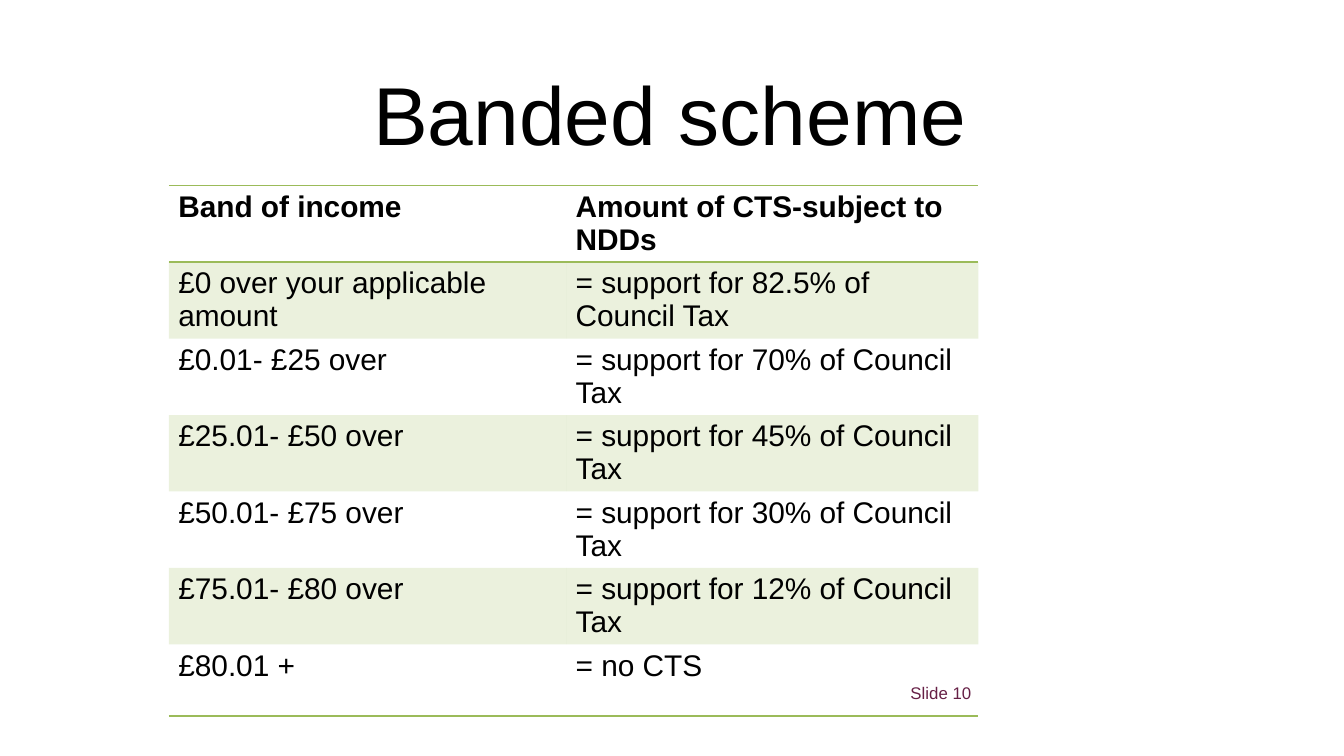
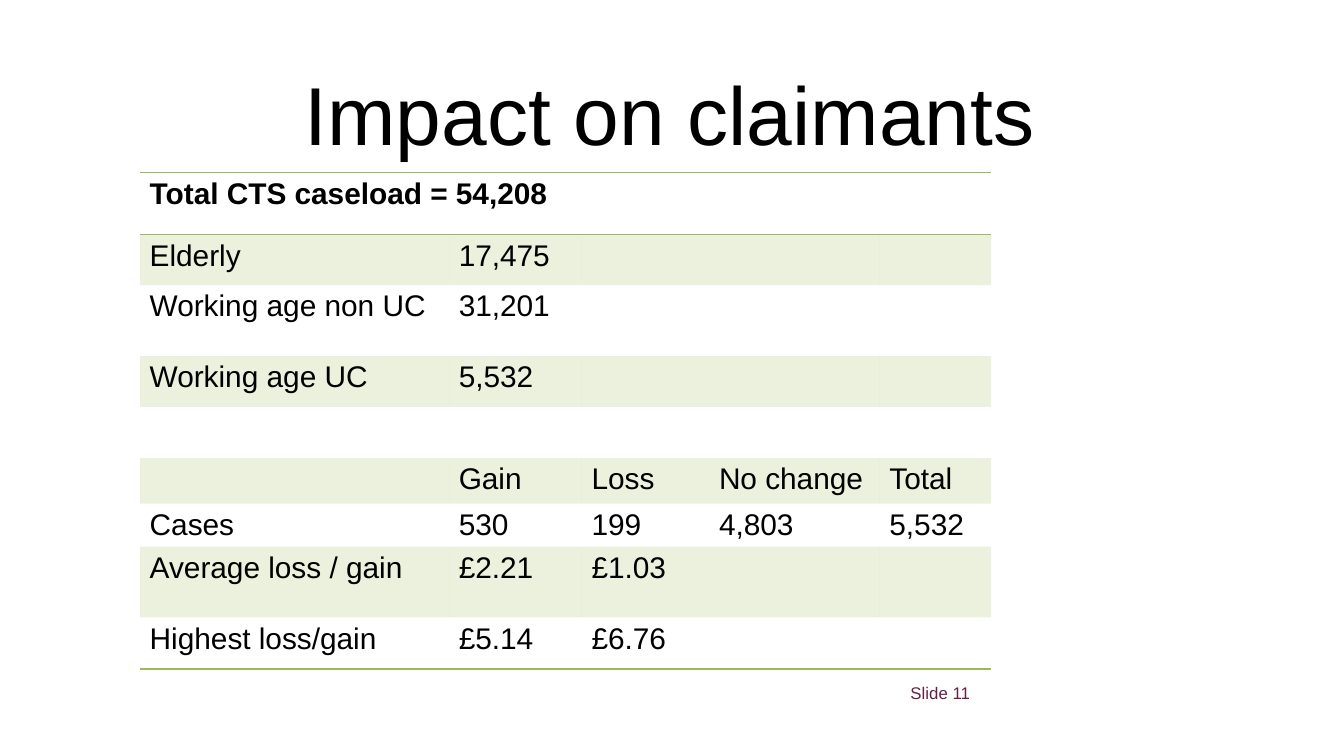
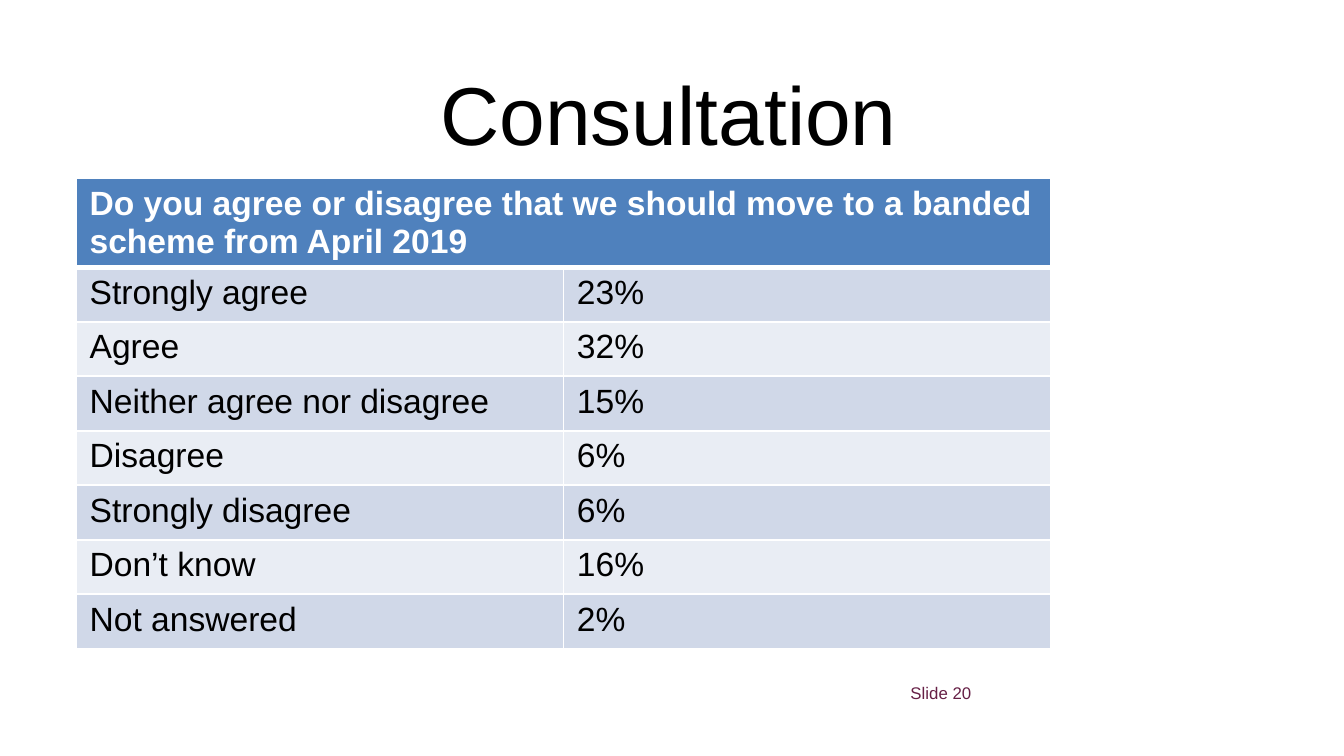
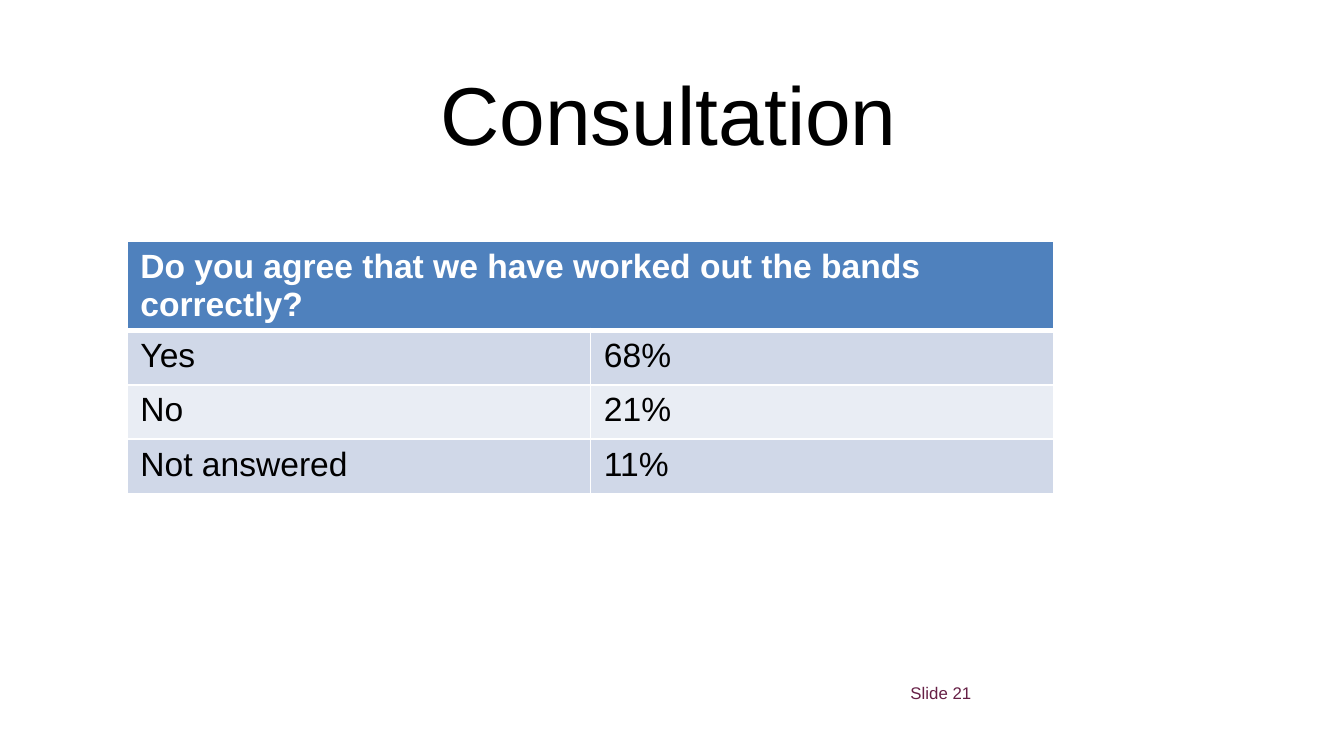
from dataclasses import dataclass

from lxml.etree import SubElement
from pptx import Presentation
from pptx.dml.color import RGBColor
from pptx.enum.text import PP_ALIGN
from pptx.oxml.ns import qn
from pptx.util import Cm, Pt


@dataclass(frozen=True)
class Theme:
    font: str = "Arial"
    black: str = "000000"
    white: str = "FFFFFF"
    plum: str = "662046"
    green: str = "9BBB59"
    blue: str = "4F81BD"
    blue_bands: tuple = ("D0D8E8", "E9EDF4")
    title_size: int = 44
    poll_size: int = 18
    figures_size: int = 16
    footer_size: int = 9
    green_opacity: int = 20
    thin_line: int = 1
    thick_line: int = 3


@dataclass(frozen=True)
class Box:
    """A region in centimetres."""
    left: float
    top: float
    width: float
    height: float

    def lengths(self):
        return [Cm(value) for value in (self.left, self.top, self.width, self.height)]


THEME = Theme()
PLAIN_TABLE_STYLE = "{2D5ABB26-0587-4C30-8999-92F81FD0307C}"
NARROW_TITLE = Box(4.98, 1.04, 15.37, 1.52)
WIDE_TITLE = Box(2.39, 1.04, 20.5, 1.52)
FOOTER = Box(16.87, 12.78, 5.92, 0.76)
POLL_ROW = 1.03

BANDS = [
    ("Band of income", "Amount of CTS-subject to NDDs"),
    ("£0 over your applicable amount", "= support for 82.5% of Council Tax"),
    ("£0.01- £25 over", "= support for 70% of Council Tax"),
    ("£25.01- £50 over", "= support for 45% of Council Tax"),
    ("£50.01- £75 over", "= support for 30% of Council Tax"),
    ("£75.01- £80 over", "= support for 12% of Council Tax"),
    ("£80.01 +", "= no CTS"),
]
IMPACT = [
    ("Total CTS caseload = 54,208",),
    ("Elderly", "17,475"),
    ("Working age non UC", "31,201"),
    ("Working age UC", "5,532"),
    (),
    ("", "Gain", "Loss", "No change", "Total"),
    ("Cases", "530", "199", "4,803", "5,532"),
    ("Average loss / gain", "£2.21", "£1.03"),
    ("Highest loss/gain", "£5.14", "£6.76"),
]
MOVE_POLL = [
    ("Do you agree or disagree that we should move to a banded scheme from April 2019",),
    ("Strongly agree", "23%"),
    ("Agree", "32%"),
    ("Neither agree nor disagree", "15%"),
    ("Disagree", "6%"),
    ("Strongly disagree", "6%"),
    ("Don’t know", "16%"),
    ("Not answered", "2%"),
]
BANDS_POLL = [
    ("Do you agree that we have worked out the bands correctly?",),
    ("Yes", "68%"),
    ("No", "21%"),
    ("Not answered", "11%"),
]


def write_text(text_frame, text, size, color=THEME.black, bold=False, align=PP_ALIGN.LEFT):
    text_frame.word_wrap = True
    paragraph = text_frame.paragraphs[0]
    paragraph.alignment = align
    run = paragraph.add_run()
    run.text = text
    run.font.name = THEME.font
    run.font.size = Pt(size)
    run.font.bold = bold
    run.font.color.rgb = RGBColor.from_string(color)


def fill_cell(cell, color, opacity=100):
    cell.fill.solid()
    cell.fill.fore_color.rgb = RGBColor.from_string(color)
    if opacity < 100:
        color_element = cell._tc.tcPr.find(qn("a:solidFill"))[0]
        SubElement(color_element, qn("a:alpha"), val=str(opacity * 1000))


def set_borders(cell, color, **widths):
    """Draw the sides named L, R, T and B, in points; call before filling the cell."""
    properties = cell._tc.get_or_add_tcPr()
    for side in "LRTB":
        if side in widths:
            line = SubElement(properties, qn(f"a:ln{side}"), w=str(Pt(widths[side])))
            fill = SubElement(line, qn("a:solidFill"))
            SubElement(fill, qn("a:srgbClr"), val=color)


def add_title(slide, box, text):
    text_frame = slide.shapes.add_textbox(*box.lengths()).text_frame
    text_frame.margin_top = Cm(0.15)
    text_frame.margin_bottom = 0
    write_text(text_frame, text, THEME.title_size, align=PP_ALIGN.CENTER)


def add_footer(slide, box, number):
    text_frame = slide.shapes.add_textbox(*box.lengths()).text_frame
    write_text(text_frame, f" Slide {number}", THEME.footer_size, THEME.plum)


def add_plain_table(slide, left, top, columns, heights):
    """Add an unstyled table whose column widths and row heights are in centimetres."""
    box = Box(left, top, sum(columns), sum(heights))
    table = slide.shapes.add_table(len(heights), len(columns), *box.lengths()).table
    table._tbl.tblPr.find(qn("a:tableStyleId")).text = PLAIN_TABLE_STYLE
    for column, width in zip(table.columns, columns):
        column.width = Cm(width)
    for row, height in zip(table.rows, heights):
        row.height = Cm(height)
    return table


def write_rows(table, rows, size, header_color=THEME.black):
    """Write the texts; a single header text spans the whole table."""
    if len(rows[0]) == 1:
        table.cell(0, 0).merge(table.cell(0, len(table.columns) - 1))
    for row_index, texts in enumerate(rows):
        is_header = row_index == 0
        for column_index, text in enumerate(texts):
            if text:
                write_text(table.cell(row_index, column_index).text_frame, text, size,
                           header_color if is_header else THEME.black, bold=is_header)


def add_figures_table(slide, left, top, columns, heights, rows):
    """Green-ruled table with every second row tinted."""
    table = add_plain_table(slide, left, top, columns, heights)
    line = THEME.thin_line
    for row_index, row in enumerate(table.rows):
        for cell in row.cells:
            cell.margin_left = cell.margin_right = Cm(0.18)
            cell.margin_top = Cm(0.09)
            cell.margin_bottom = 0
            if row_index == 0:
                set_borders(cell, THEME.green, T=line, B=line)
            elif row_index == len(rows) - 1:
                set_borders(cell, THEME.green, B=line)
            if row_index % 2:
                fill_cell(cell, THEME.green, THEME.green_opacity)
    write_rows(table, rows, THEME.figures_size)


def add_poll_table(slide, left, top, column_width, rows):
    """Blue question row over answer rows in two alternating tints."""
    table = add_plain_table(slide, left, top, [column_width] * 2, [POLL_ROW] * len(rows))
    thin, thick = THEME.thin_line, THEME.thick_line
    for row_index, row in enumerate(table.rows):
        for cell in row.cells:
            cell.margin_bottom = Cm(0.03)
            set_borders(cell, THEME.white, L=thin, R=thin,
                        T=thick if row_index == 1 else thin,
                        B=thick if row_index == 0 else thin)
            fill_cell(cell, THEME.blue_bands[(row_index - 1) % 2] if row_index else THEME.blue)
    write_rows(table, rows, THEME.poll_size, THEME.white)


def add_slide(presentation, title, number, title_box):
    slide = presentation.slides.add_slide(presentation.slide_layouts[6])
    add_title(slide, title_box, title)
    add_footer(slide, FOOTER, number)
    return slide


def main():
    presentation = Presentation()
    presentation.slide_width = Cm(25.4)
    presentation.slide_height = Cm(14.29)

    slide = add_slide(presentation, "Banded scheme", 10, NARROW_TITLE)
    add_figures_table(slide, 3.19, 3.51, [7.51, 7.79], [1.35] * len(BANDS), BANDS)

    slide = add_slide(presentation, "Impact on claimants", 11, NARROW_TITLE)
    add_figures_table(slide, 2.65, 3.26, [5.84, 2.51, 2.41, 3.22, 2.1],
                      [1.17, 0.96, 1.34, 0.96, 0.97, 0.86, 0.81, 1.34, 0.97], IMPACT)

    slide = add_slide(presentation, "Consultation", 20, WIDE_TITLE)
    add_poll_table(slide, 1.44, 3.37, 9.21, MOVE_POLL)

    slide = add_slide(presentation, "Consultation", 21, WIDE_TITLE)
    add_poll_table(slide, 2.4, 4.56, 8.76, BANDS_POLL)

    presentation.save("out.pptx")


if __name__ == "__main__":
    main()
